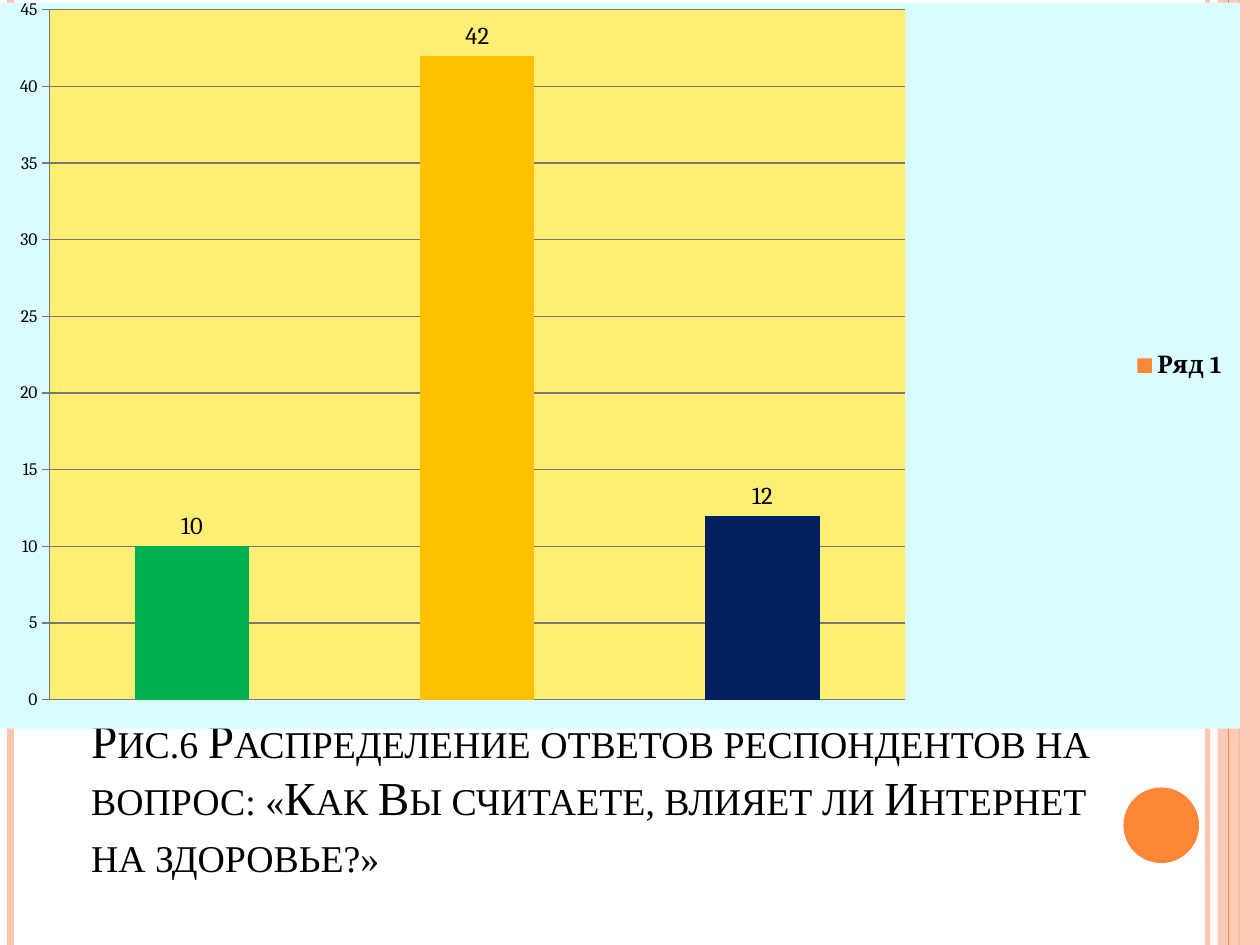
from lxml import etree
from pptx import Presentation
from pptx.chart.data import CategoryChartData
from pptx.dml.color import RGBColor
from pptx.enum.chart import XL_CHART_TYPE as Chart, XL_LABEL_POSITION as Label
from pptx.enum.chart import XL_LEGEND_POSITION as Legend, XL_TICK_MARK as Tick
from pptx.enum.shapes import MSO_CONNECTOR as Conn, MSO_SHAPE as Shape
from pptx.enum.text import MSO_ANCHOR as Anchor
from pptx.oxml import parse_xml
from pptx.oxml.ns import nsdecls, qn
from pptx.util import Inches, Pt

COLORS = {
    "white": "FFFFFF", "black": "000000", "peach": "FEC3AE", "orange": "FE8637",
    "sky": "DBFCFD", "yellow": "FFEE74", "grid": "787878",
    "green": "00B050", "amber": "FFC000", "navy": "002060",
}
COLS, ROWS = 120, 90


class SlideBuilder:
    def __init__(self, prs):
        self.col, self.row = prs.slide_width / COLS, prs.slide_height / ROWS
        self.s = prs.slides.add_slide(prs.slide_layouts[6])
        self.paint(self.s.background.fill, "white")

    def box(self, x, y, w, h):
        return [int(v) for v in (x * self.col, y * self.row, w * self.col, h * self.row)]

    def paint(self, fill, color, alpha=None):
        fill.solid()
        fill.fore_color.rgb = RGBColor.from_string(COLORS[color])
        if alpha:
            clr = fill._xPr.find(qn("a:solidFill"))[0]
            etree.SubElement(clr, qn("a:alpha")).set("val", str(alpha * 1000))

    def style(self, font, size, name, bold=False):
        font.size, font.name, font.bold = Pt(size), name, bold
        font.color.rgb = RGBColor.from_string(COLORS["black"])

    def stripe(self, x, color, width, alpha=None):
        left, top, _, height = self.box(x, 0, 0, ROWS)
        line = self.s.shapes.add_connector(Conn.STRAIGHT, left, top, left, height)
        line.line.width = Pt(width)
        self.paint(line.line.fill, color, alpha)
        etree.SubElement(line._element.spPr, qn("a:effectLst"))

    def shape(self, kind, box, color, alpha=None):
        sp = self.s.shapes.add_shape(kind, *self.box(*box))
        sp.shadow.inherit = False
        self.paint(sp.fill, color, alpha)
        sp.line.fill.background()

    def caption(self, box, text, size):
        tf = self.s.shapes.add_textbox(*self.box(*box)).text_frame
        tf.word_wrap, tf.vertical_anchor = True, Anchor.BOTTOM
        tf.margin_top, tf.margin_bottom = 0, Inches(0.5)
        tf.text = text
        p = tf.paragraphs[0]
        p.line_spacing = Pt(32.5)
        r = p.runs[0]
        self.style(r.font, size, "Times New Roman")
        r.font._element.set("cap", "small")

    def columns(self, box, name, values, colors, plot):
        data = CategoryChartData()
        data.categories = [str(i + 1) for i in range(len(values))]
        data.add_series(name, values)
        chart = self.s.shapes.add_chart(Chart.COLUMN_CLUSTERED, *self.box(*box), data).chart
        self.style(chart.font, 10, "Cambria")
        chart.has_title = False
        chart.has_legend = True
        chart.legend.position = Legend.RIGHT
        chart.legend.include_in_layout = False
        self.style(chart.legend.font, 14, "Cambria", True)
        chart.category_axis.visible = False
        axis = chart.value_axis
        axis.minimum_scale, axis.maximum_scale, axis.major_unit = 0, 45, 5
        axis.major_tick_mark = Tick.CROSS
        for line in (axis.format.line, axis.major_gridlines.format.line):
            self.paint(line.fill, "grid")
            line.width = Pt(0.75)
        bars = chart.plots[0]
        bars.vary_by_categories, bars.gap_width = False, 150
        series = bars.series[0]
        self.paint(series.format.fill, "orange")
        for i, color in enumerate(colors):
            self.paint(series.points[i].format.fill, color)
        labels = series.data_labels
        labels.show_value, labels.position = True, Label.OUTSIDE_END
        self.style(labels.font, 14, "Cambria")
        self.chart_areas(chart, plot)

    def chart_areas(self, chart, plot):
        area = chart._chartSpace.chart.plotArea
        for old in area.findall(qn("c:layout")):
            area.remove(old)
        modes = "".join(f'<c:{k}Mode val="edge"/>' for k in "xy")
        sizes = "".join(f'<c:{k} val="{v}"/>' for k, v in zip("xywh", plot))
        area.insert(0, parse_xml(
            f'<c:layout {nsdecls("c")}><c:manualLayout><c:layoutTarget val="inner"/>'
            f'{modes}{sizes}</c:manualLayout></c:layout>'))
        area.append(self.area_fill("yellow"))
        chart._chartSpace.chart.addnext(self.area_fill("sky"))

    def area_fill(self, color):
        return parse_xml(
            f'<c:spPr {nsdecls("c", "a")}><a:solidFill><a:srgbClr val="{COLORS[color]}"/>'
            '</a:solidFill><a:ln><a:noFill/></a:ln></c:spPr>')


def main():
    prs = Presentation()
    prs.slide_width, prs.slide_height = Inches(10), Inches(7.5)
    b = SlideBuilder(prs)
    b.stripe(115, "peach", 3, 93)
    b.stripe(1, "peach", 4.5)
    b.stripe(118, "orange", 1.5)
    b.shape(Shape.RECTANGLE, (116, 0, 4, ROWS), "peach", 87)
    b.stripe(117, "orange", 0.75)
    b.shape(Shape.OVAL, (107, 75, 7.2, 7.2), "orange")
    b.caption((7.5, 71.4, 100.2, 18.6),
              "Рис.6 Распределение ответов респондентов на вопрос: "
              "«Как Вы считаете, влияет ли Интернет на здоровье?»", 27)
    b.columns((0, 0, 118.1, 69.4), "Ряд 1", (10, 42, 12),
              ("green", "amber", "navy"), (0.04, 0.01, 0.69, 0.95))
    prs.save("out.pptx")


if __name__ == "__main__":
    main()
